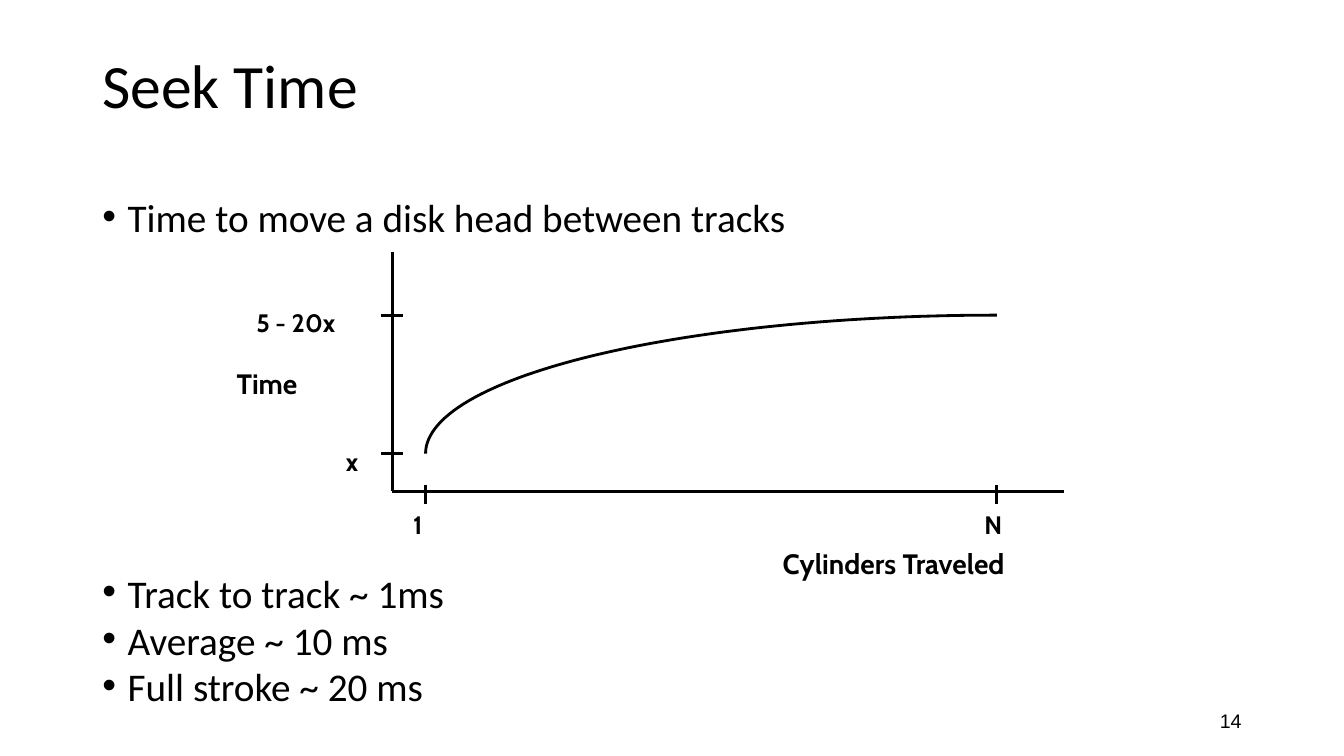
from math import cos, pi, sin
from lxml.etree import SubElement
from pptx import Presentation
from pptx.dml.color import RGBColor
from pptx.enum.text import MSO_ANCHOR, MSO_AUTO_SIZE, PP_ALIGN
from pptx.oxml.ns import qn
from pptx.util import Pt

# Content: text, gap above
TITLE = "Seek Time"
BULLETS = [
    ("Time to move a disk head between tracks", 10),
    ("Track to track ~ 1ms", 244.5),
    ("Average ~ 10 ms", 10),
    ("Full stroke ~ 20 ms", 10),
]
# Text, left, top, width, height, size
LABELS = [
    ("5 - 20x", 176, 216, 78.5, 29, 18),
    ("x", 240, 315, 25, 29, 18),
    ("1", 288, 360, 26, 29, 18),
    ("N", 696, 360, 29, 29, 18),
    ("Cylinders Traveled", 552, 387, 202, 31.5, 20),
    ("Time", 162, 258, 64, 31.5, 20),
]
BLACK = "000000"

# Graph geometry
AXIS_X, AXIS_Y = 280.2, 351
TOP, RIGHT = 180, 760
FIRST, LAST = 304, 712
LOW, HIGH = 324, 225.1
STEPS = 60

deck = Presentation()
deck.slide_width, deck.slide_height = Pt(960), Pt(540)
slide = deck.slides.add_slide(deck.slide_layouts[1])
shapes = slide.shapes


def color(code):
    return RGBColor.from_string(code)


def place(shape, *box):
    shape.left, shape.top, shape.width, shape.height = map(Pt, box)


def write(para, text, size, font, bold=False):
    run = para.add_run()
    run.text = text
    run.font.size, run.font.name, run.font.bold = Pt(size), font, bold
    run.font.color.rgb = color(BLACK)


def stroke(shape):
    shape.line.color.rgb = color(BLACK)
    shape.line.width = Pt(2)


def draw(x1, y1, x2, y2):
    line = shapes.add_connector(1, Pt(x1), Pt(y1), Pt(x2), Pt(y2))
    stroke(line)
    SubElement(line._element.spPr, qn("a:effectLst"))


# Title
title = shapes.title
place(title, 66, 24, 828, 78.5)
frame = title.text_frame
frame.auto_size = MSO_AUTO_SIZE.NONE
frame.vertical_anchor = MSO_ANCHOR.MIDDLE
para = frame.paragraphs[0]
para.alignment, para.line_spacing = PP_ALIGN.LEFT, 0.9
write(para, TITLE, 44, "Calibri")

# Bullet list
body = slide.placeholders[1]
place(body, 66, 111, 828, 376)
frame = body.text_frame
frame.auto_size = MSO_AUTO_SIZE.NONE
frame.margin_top = Pt(36.5)
for i, (text, gap) in enumerate(BULLETS):
    para = frame.add_paragraph() if i else frame.paragraphs[0]
    para.line_spacing, para.space_before = 0.7, Pt(gap)
    props = para._p.get_or_add_pPr()
    props.set("marL", str(Pt(18)))
    props.set("indent", str(-Pt(18)))
    write(para, text, 28, "Calibri")

# Axes and ticks
draw(AXIS_X, TOP, AXIS_X, AXIS_Y)
draw(AXIS_X, AXIS_Y, RIGHT, AXIS_Y)
for x in (FIRST, LAST):
    draw(x, 346.5, x, 360)
for y in (LOW, HIGH):
    draw(AXIS_X - 8, y, AXIS_X + 8, y)

# Seek curve: a quarter of an ellipse
angles = [pi / 2 * i / STEPS for i in range(STEPS + 1)]
points = [(Pt(LAST - (LAST - FIRST) * cos(a)), Pt(LOW - (LOW - HIGH) * sin(a)))
          for a in angles]
outline = shapes.build_freeform(*points[0])
outline.add_line_segments(points[1:], close=False)
curve = outline.convert_to_shape()
curve.shadow.inherit = False
curve.fill.background()
stroke(curve)

# Graph labels
for text, *box, size in LABELS:
    frame = shapes.add_textbox(*map(Pt, box)).text_frame
    frame.word_wrap = False
    frame.auto_size = MSO_AUTO_SIZE.SHAPE_TO_FIT_TEXT
    write(frame.paragraphs[0], text, size, "Cabin", True)

# Slide number
frame = shapes.add_textbox(Pt(678), Pt(500.5), Pt(216), Pt(29)).text_frame
frame.word_wrap = True
frame.vertical_anchor = MSO_ANCHOR.MIDDLE
frame.paragraphs[0].alignment = PP_ALIGN.RIGHT
write(frame.paragraphs[0], "14", 14, "Arial")

deck.save("out.pptx")
